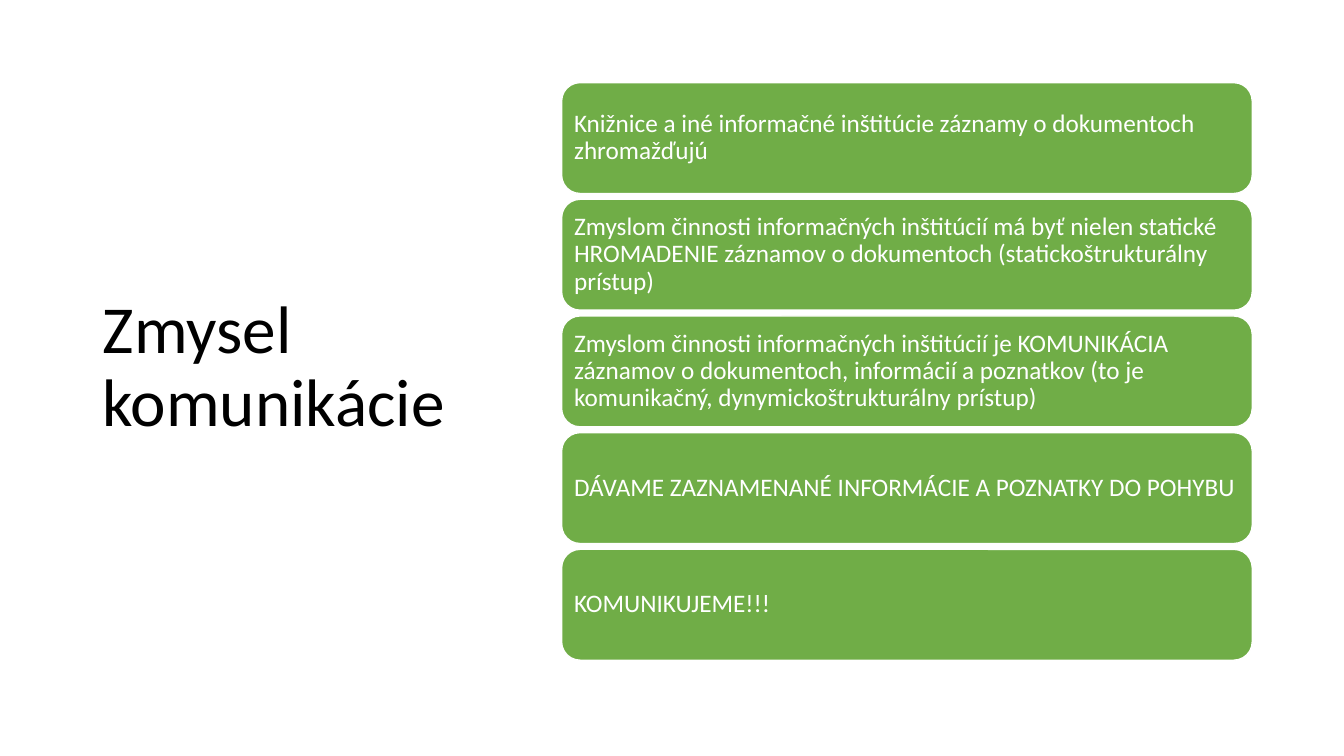
import pptx
import pptx.util
import pptx.dml.color
import pptx.enum.shapes
import pptx.enum.text

EMU_PER_PX = 9144
STATEMENTS = [
    "Knižnice a iné informačné inštitúcie záznamy o dokumentoch zhromažďujú",
    "Zmyslom činnosti informačných inštitúcií má byť nielen statické HROMADENIE "
    "záznamov o dokumentoch (statickoštrukturálny prístup)",
    "Zmyslom činnosti informačných inštitúcií je KOMUNIKÁCIA záznamov o dokumentoch, "
    "informácií a poznatkov (to je komunikačný, dynymickoštrukturálny prístup)",
    "DÁVAME ZAZNAMENANÉ INFORMÁCIE A POZNATKY DO POHYBU",
    "KOMUNIKUJEME!!!",
]


def px(length):
    """Convert pixels to EMU."""
    return pptx.util.Emu(round(length * EMU_PER_PX))


def color(hex_value):
    """Return the colour for a hex string."""
    return pptx.dml.color.RGBColor.from_string(hex_value)


def write(frame, wording, size, hex_value, inset_x, inset_y):
    """Fill a frame with one left-aligned, vertically centred paragraph."""
    frame.word_wrap = True
    frame.vertical_anchor = pptx.enum.text.MSO_ANCHOR.MIDDLE
    frame.margin_left = frame.margin_right = px(inset_x)
    frame.margin_top = frame.margin_bottom = px(inset_y)
    frame.text = wording
    paragraph = frame.paragraphs[0]
    paragraph.alignment = pptx.enum.text.PP_ALIGN.LEFT
    paragraph.line_spacing = 0.9
    font = paragraph.runs[0].font
    font.name = "Calibri"
    font.size = pptx.util.Pt(size)
    font.color.rgb = color(hex_value)


def add_heading(slide, left, top, width, height):
    """Place the slide heading in its box."""
    heading = slide.shapes.add_textbox(px(left), px(top), px(width), px(height))
    write(heading.text_frame, "Zmysel komunikácie", 48, "000000", 10, 5)


def add_statements(slide, left, top, width, height):
    """Stack the statement cards evenly in the box."""
    card_height = 110
    pitch = (height - card_height) / (len(STATEMENTS) - 1)
    for index, statement in enumerate(STATEMENTS):
        card = slide.shapes.add_shape(
            pptx.enum.shapes.MSO_SHAPE.ROUNDED_RECTANGLE,
            px(left), px(top + index * pitch), px(width), px(card_height))
        card.shadow.inherit = False
        card.fill.solid()
        card.fill.fore_color.rgb = color("70AD47")
        card.line.color.rgb = color("FFFFFF")
        card.line.width = pptx.util.Pt(1)
        write(card.text_frame, statement, 18, "FFFFFF", 7, 7)


def main():
    """Build and save the presentation."""
    presentation = pptx.Presentation()
    presentation.slide_width = px(1333)
    presentation.slide_height = px(750)
    slide = presentation.slides.add_slide(presentation.slide_layouts[6])
    add_heading(slide, 92, 61, 369, 609)
    add_statements(slide, 557, 82, 685, 573)
    presentation.save("out.pptx")


if __name__ == "__main__":
    main()
